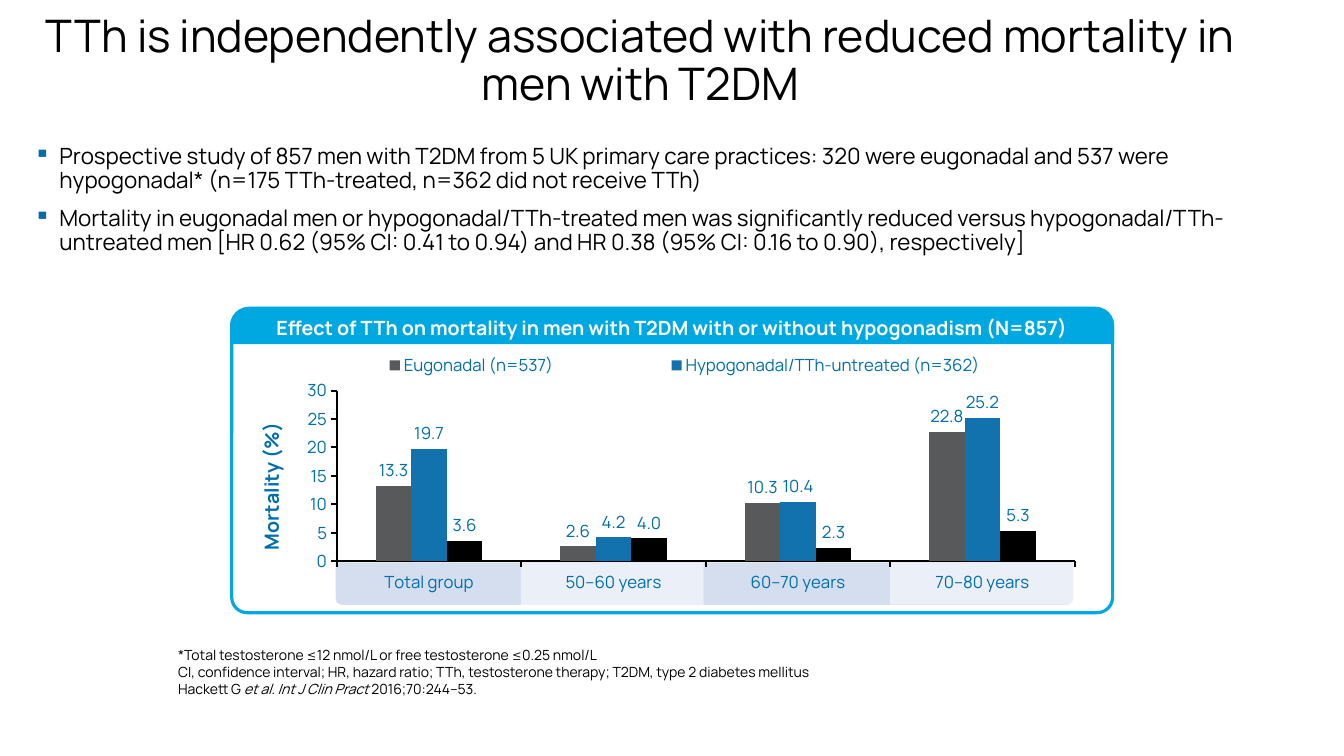
from lxml import etree
from pptx import Presentation
from pptx.chart.data import CategoryChartData
from pptx.dml.color import RGBColor
from pptx.enum.chart import XL_CHART_TYPE as Kind, XL_LABEL_POSITION as Spot
from pptx.enum.chart import XL_LEGEND_POSITION as Side, XL_TICK_MARK as Tick
from pptx.enum.shapes import MSO_SHAPE as Form
from pptx.enum.text import MSO_ANCHOR as Anchor, PP_ALIGN as Align
from pptx.oxml import parse_xml
from pptx.oxml.ns import nsdecls, qn
from pptx.util import Cm, Pt

BLACK = RGBColor(0, 0, 0)
WHITE = RGBColor(255, 255, 255)
BLUE = RGBColor(0x00, 0x6E, 0xAB)
SKY = RGBColor(0x00, 0xA8, 0xE1)
GREY = RGBColor(0x58, 0x59, 0x5B)
BAR = RGBColor(0x12, 0x72, 0xAE)
PALE = RGBColor(0xD5, 0xDE, 0xEF)
LIGHT = RGBColor(0xEB, 0xEF, 0xF7)


def style(font, color, **look):
    for key, val in {"name": "Manrope", **look}.items():
        setattr(font, key, val)
    font.color.rgb = color


def write(box, paras, size, color, anchor, bold=False, **look):
    frame = box.text_frame
    frame.word_wrap = True
    frame.vertical_anchor = anchor
    for num, runs in enumerate(paras):
        para = frame.add_paragraph() if num else frame.paragraphs[0]
        for key, val in look.items():
            if num or key != "space_before":
                setattr(para, key, val)
        for text, slant in runs:
            run = para.add_run()
            run.text = text
            style(run.font, color, size=Pt(size), bold=bold, italic=slant)


deck = Presentation()
deck.slide_width, deck.slide_height = Cm(33.87), Cm(19.05)
slide = deck.slides.add_slide(deck.slide_layouts[6])
shapes = slide.shapes

title = shapes.add_textbox(Cm(0.61), Cm(0.41), Cm(31.06), Cm(2.31))
write(title, [[("TTh is independently associated with reduced mortality in men with T2DM", False)]],
      32, BLACK, Anchor.MIDDLE, alignment=Align.CENTER, line_spacing=0.9)

points = [
    "Prospective study of 857 men with T2DM from 5 UK primary care practices: 320 were eugonadal "
    "and 537 were hypogonadal* (n=175 TTh-treated, n=362 did not receive TTh)",
    "Mortality in eugonadal men or hypogonadal/TTh-treated men was significantly reduced versus "
    "hypogonadal/TTh-untreated men [HR 0.62 (95% CI: 0.41 to 0.94) and HR 0.38 "
    "(95% CI: 0.16 to 0.90), respectively]",
]
body = shapes.add_textbox(Cm(0.61), Cm(3.53), Cm(31.39), Cm(4.01))
write(body, [[(point, False)] for point in points], 16, BLACK, Anchor.TOP,
      line_spacing=0.9, space_before=Pt(10))
for para in body.text_frame.paragraphs:
    props = para._p.get_or_add_pPr()
    props.set("marL", str(Cm(0.64)))
    props.set("indent", str(Cm(-0.64)))
    tint = etree.SubElement(props, qn("a:buClr"))
    etree.SubElement(tint, qn("a:srgbClr")).set("val", str(BLUE))
    etree.SubElement(props, qn("a:buChar")).set("char", "▪")

notes = [
    [("*Total testosterone ≤12 nmol/L or free testosterone ≤0.25 nmol/L", False)],
    [("CI, confidence interval; HR, hazard ratio; TTh, testosterone therapy; "
      "T2DM, type 2 diabetes mellitus", False)],
    [("Hackett G ", False), ("et al. Int J Clin Pract", True), (" 2016;70:244–53.", False)],
]
foot = shapes.add_textbox(Cm(4.24), Cm(16.15), Cm(25.4), Cm(1.55))
write(foot, notes, 10, BLACK, Anchor.BOTTOM)

bands = [
    (Form.ROUND_2_SAME_RECTANGLE, 8.46, 18.57, [0.137, 0], PALE, "rot", "10800000"),
    (Form.ROUND_1_RECTANGLE, 22.43, 4.62, [0.151], LIGHT, "flipV", "1"),
    (Form.ROUND_2_SAME_RECTANGLE, 13.13, 4.6, [0, 0], LIGHT, "flipV", "0"),
]
for form, left, width, bends, color, turn, val in bands:
    band = shapes.add_shape(form, Cm(left), Cm(14.17), Cm(width), Cm(1.07))
    band.shadow.inherit = False
    for num, bend in enumerate(bends):
        band.adjustments[num] = bend
    band.fill.solid()
    band.fill.fore_color.rgb = color
    band.line.fill.background()
    band._element.spPr.find(qn("a:xfrm")).set(turn, val)

data = CategoryChartData()
data.categories = ["Total group", "50–60 years", "60–70 years", "70–80 years"]
rows = [
    ("Eugonadal (n=537)", (13.3, 2.6, 10.3, 22.8), GREY),
    ("Hypogonadal/TTh-untreated (n=362)", (19.7, 4.2, 10.4, 25.2), BAR),
    ("", (3.6, 4, 2.3, 5.3), BLACK),
]
for name, vals, color in rows:
    data.add_series(name, vals)
chart = shapes.add_chart(Kind.COLUMN_CLUSTERED, Cm(6.35), Cm(8.03), Cm(21.18), Cm(8.13), data).chart
style(chart.font, BLUE, size=Pt(10))
chart.has_title = False
plot = chart.plots[0]
for key, val in {"gap_width": 219, "overlap": 0, "vary_by_categories": False}.items():
    setattr(plot, key, val)
for series, (name, vals, color) in zip(plot.series, rows):
    series.format.fill.solid()
    series.format.fill.fore_color.rgb = color
    tags = series.data_labels
    look = {"show_value": True, "position": Spot.OUTSIDE_END,
            "number_format": "0.0", "number_format_is_linked": False}
    for key, val in look.items():
        setattr(tags, key, val)
    style(tags.font, BLUE, size=Pt(12))

scale = chart.value_axis
for axis in (chart.category_axis, scale):
    look = {"major_tick_mark": Tick.OUTSIDE, "minor_tick_mark": Tick.NONE,
            "has_major_gridlines": False}
    for key, val in look.items():
        setattr(axis, key, val)
    style(axis.tick_labels.font, BLUE, size=Pt(12))
    axis.format.line.color.rgb = BLACK
    axis.format.line.width = Pt(1.5)
for key, val in {"minimum_scale": 0, "maximum_scale": 30, "major_unit": 5}.items():
    setattr(scale, key, val)
label = scale.axis_title.text_frame.paragraphs[0].add_run()
label.text = "Mortality (%)"
style(label.font, BLUE, size=Pt(14), bold=True)

chart.has_legend = True
legend = chart.legend
legend.position = Side.BOTTOM
legend.include_in_layout = False
style(legend.font, BLUE, size=Pt(12))

area = chart._chartSpace.chart.plotArea
for old in area.findall(qn("c:layout")):
    area.remove(old)
places = [
    (area, 0, "inner", (0.101, 0.223, 0.878, 0.529)),
    (legend._element, 1, "", (0.03, 0.1, 0.97, 0.09)),
]
for part, spot, target, nums in places:
    inner = f'<c:layoutTarget val="{target}"/>' if target else ""
    modes = "".join(f'<c:{axis}Mode val="edge"/>' for axis in "xy")
    sizes = "".join(f'<c:{key} val="{num}"/>' for key, num in zip("xywh", nums))
    part.insert(spot, parse_xml(
        f'<c:layout {nsdecls("c")}><c:manualLayout>{inner}{modes}{sizes}</c:manualLayout></c:layout>'))
legend._element.insert(1, parse_xml(
    f'<c:legendEntry {nsdecls("c")}><c:idx val="2"/><c:delete val="1"/></c:legendEntry>'))

frame = shapes.add_shape(Form.ROUNDED_RECTANGLE, Cm(5.84), Cm(7.82), Cm(22.2), Cm(7.62))
frame.adjustments[0] = 0.051
frame.fill.background()
head = shapes.add_shape(Form.ROUND_2_SAME_RECTANGLE, Cm(5.84), Cm(7.77), Cm(22.2), Cm(0.86))
head.adjustments[0] = 0.5
head.fill.solid()
head.fill.fore_color.rgb = SKY
for shape in (frame, head):
    shape.shadow.inherit = False
    shape.line.color.rgb = SKY
    shape.line.width = Pt(2.25)
write(head, [[("Effect of TTh on mortality in men with T2DM with or without hypogonadism (N=857)", False)]],
      14, WHITE, Anchor.MIDDLE, bold=True, alignment=Align.CENTER)

deck.save("out.pptx")
